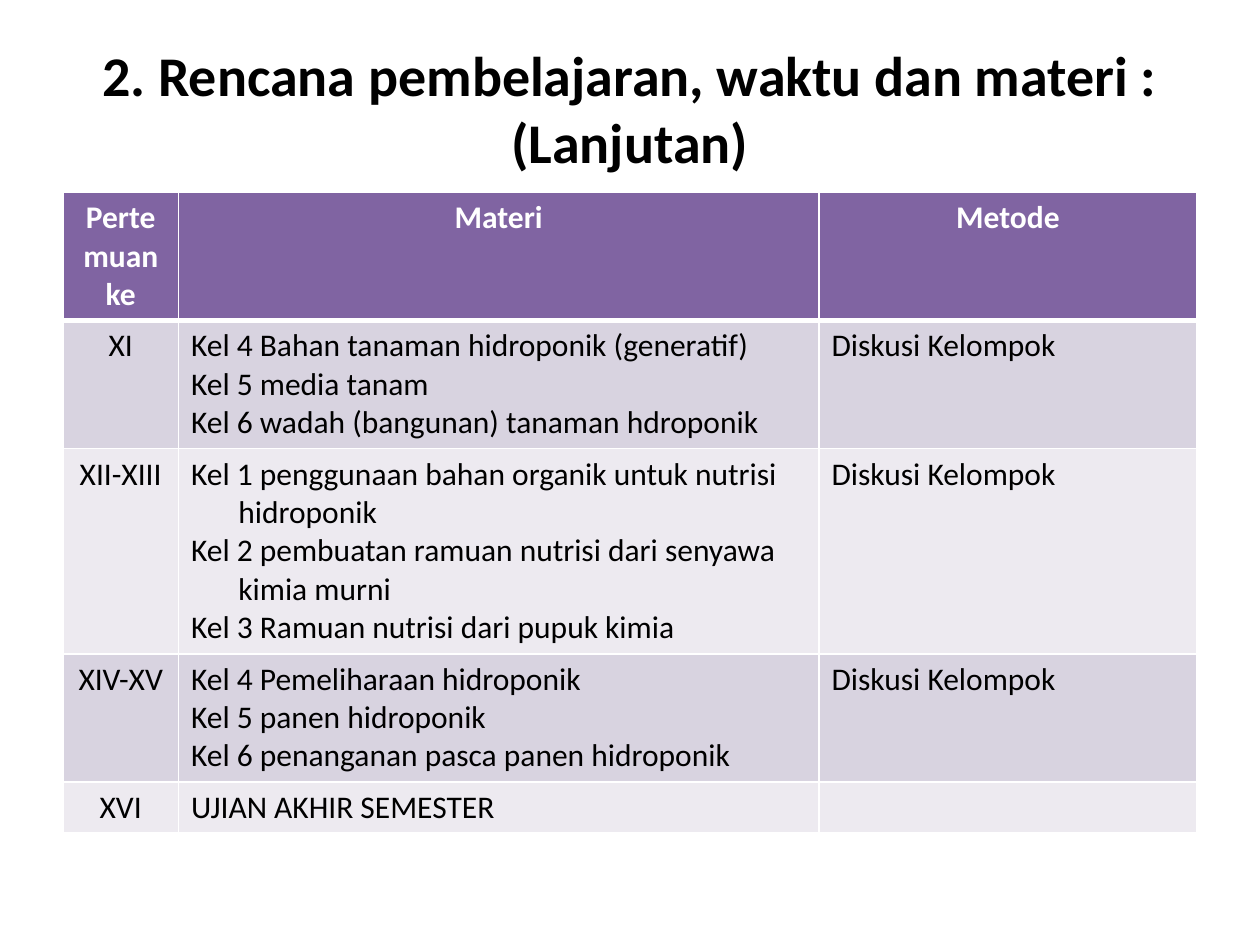
import pptx
import pptx.dml.color
import pptx.enum.text
import pptx.oxml
import pptx.oxml.ns
import pptx.util
from pptx.util import Pt

RGBColor = pptx.dml.color.RGBColor
PP_ALIGN = pptx.enum.text.PP_ALIGN

BLACK = RGBColor(0x00, 0x00, 0x00)
WHITE = RGBColor(0xFF, 0xFF, 0xFF)
PURPLE = RGBColor(0x80, 0x64, 0xA2)
BANDS = (RGBColor(0xD8, 0xD3, 0xE0), RGBColor(0xED, 0xEA, 0xF0))

HEADINGS = ("Pertemuan ke", "Materi", "Metode")
HEADING_LINES = 3
DISCUSSION = "Diskusi Kelompok"

# Meeting, topics, method, number of text lines the topics take up
MEETINGS = (
    ("XI", ("Kel 4 Bahan tanaman hidroponik (generatif)",
            "Kel 5 media tanam",
            "Kel 6 wadah (bangunan) tanaman hdroponik"), DISCUSSION, 3),
    ("XII-XIII", ("Kel 1 penggunaan bahan organik untuk nutrisi hidroponik",
                  "Kel 2 pembuatan ramuan nutrisi dari senyawa kimia murni",
                  "Kel 3 Ramuan nutrisi dari pupuk kimia"), DISCUSSION, 5),
    ("XIV-XV", ("Kel 4 Pemeliharaan hidroponik",
                "Kel 5 panen hidroponik",
                "Kel 6 penanganan pasca panen hidroponik"), DISCUSSION, 3),
    ("XVI", ("UJIAN AKHIR SEMESTER",), "", 1),
)


class LessonSlide:
    font = "Calibri"
    title_size = 32
    body_size = 18
    line_height = 22
    cell_padding = 7.2
    hanging = 27
    thin, thick = 1, 3

    def __init__(self, presentation):
        self.slide = presentation.slides.add_slide(presentation.slide_layouts[6])

    def format_paragraph(self, paragraph, size, color, bold, align):
        paragraph.alignment = align
        for font in [paragraph.font] + [run.font for run in paragraph.runs]:
            font.name = self.font
            font.size = Pt(size)
            font.bold = bold
            font.color.rgb = color

    def title(self, text, left, top, width, height):
        frame = self.slide.shapes.add_textbox(
            Pt(left), Pt(top), Pt(width), Pt(height)).text_frame
        frame.word_wrap = True
        frame.vertical_anchor = pptx.enum.text.MSO_ANCHOR.MIDDLE
        frame.text = text
        self.format_paragraph(frame.paragraphs[0], self.title_size, BLACK, True,
                              PP_ALIGN.CENTER)

    def table(self, left, top, column_widths, row_lines):
        """Add a table whose rows are as high as their number of text lines."""
        heights = [n * self.line_height + self.cell_padding for n in row_lines]
        table = self.slide.shapes.add_table(
            len(heights), len(column_widths), Pt(left), Pt(top),
            Pt(sum(column_widths)), Pt(sum(heights))).table
        for column, width in zip(table.columns, column_widths):
            column.width = Pt(width)
        for row, height in zip(table.rows, heights):
            row.height = Pt(height)
        return table

    def borders(self, cell, top, bottom):
        properties = cell._tc.get_or_add_tcPr()
        sides = (("L", self.thin), ("R", self.thin), ("T", top), ("B", bottom))
        for side, width in sides:
            properties.append(pptx.oxml.parse_xml(
                f'<a:ln{side} {pptx.oxml.ns.nsdecls("a")} w="{Pt(width)}">'
                f'<a:solidFill><a:srgbClr val="{WHITE}"/></a:solidFill>'
                f'</a:ln{side}>'))

    def cell(self, cell, lines, fill, color=BLACK, bold=False, centred=False,
             hanging=False, top=thin, bottom=thin):
        self.borders(cell, top, bottom)
        cell.fill.solid()
        cell.fill.fore_color.rgb = fill
        cell.text_frame.text = "\n".join(lines)
        align = PP_ALIGN.CENTER if centred else PP_ALIGN.LEFT
        for paragraph in cell.text_frame.paragraphs:
            self.format_paragraph(paragraph, self.body_size, color, bold, align)
            if hanging:
                indents = paragraph._p.get_or_add_pPr()
                indents.set("marL", str(Pt(self.hanging)))
                indents.set("indent", str(-Pt(self.hanging)))


def main():
    presentation = pptx.Presentation()
    presentation.slide_width = Pt(720)
    presentation.slide_height = Pt(540)

    page = LessonSlide(presentation)
    page.title("2. Rencana pembelajaran, waktu dan materi : (Lanjutan)",
               36, 21.6, 648, 80)

    row_lines = [HEADING_LINES] + [meeting[-1] for meeting in MEETINGS]
    plan = page.table(36, 110, (66, 366, 216), row_lines)
    for column, heading in enumerate(HEADINGS):
        page.cell(plan.cell(0, column), [heading], PURPLE, WHITE, bold=True,
                  centred=True, bottom=page.thick)

    for row, (meeting, topics, method, _) in enumerate(MEETINGS, start=1):
        band = BANDS[(row - 1) % 2]
        top = page.thick if row == 1 else page.thin
        page.cell(plan.cell(row, 0), [meeting], band, centred=True, top=top)
        page.cell(plan.cell(row, 1), topics, band, hanging=len(topics) > 1, top=top)
        page.cell(plan.cell(row, 2), [method], band, hanging=bool(method), top=top)

    presentation.save("out.pptx")


if __name__ == "__main__":
    main()
